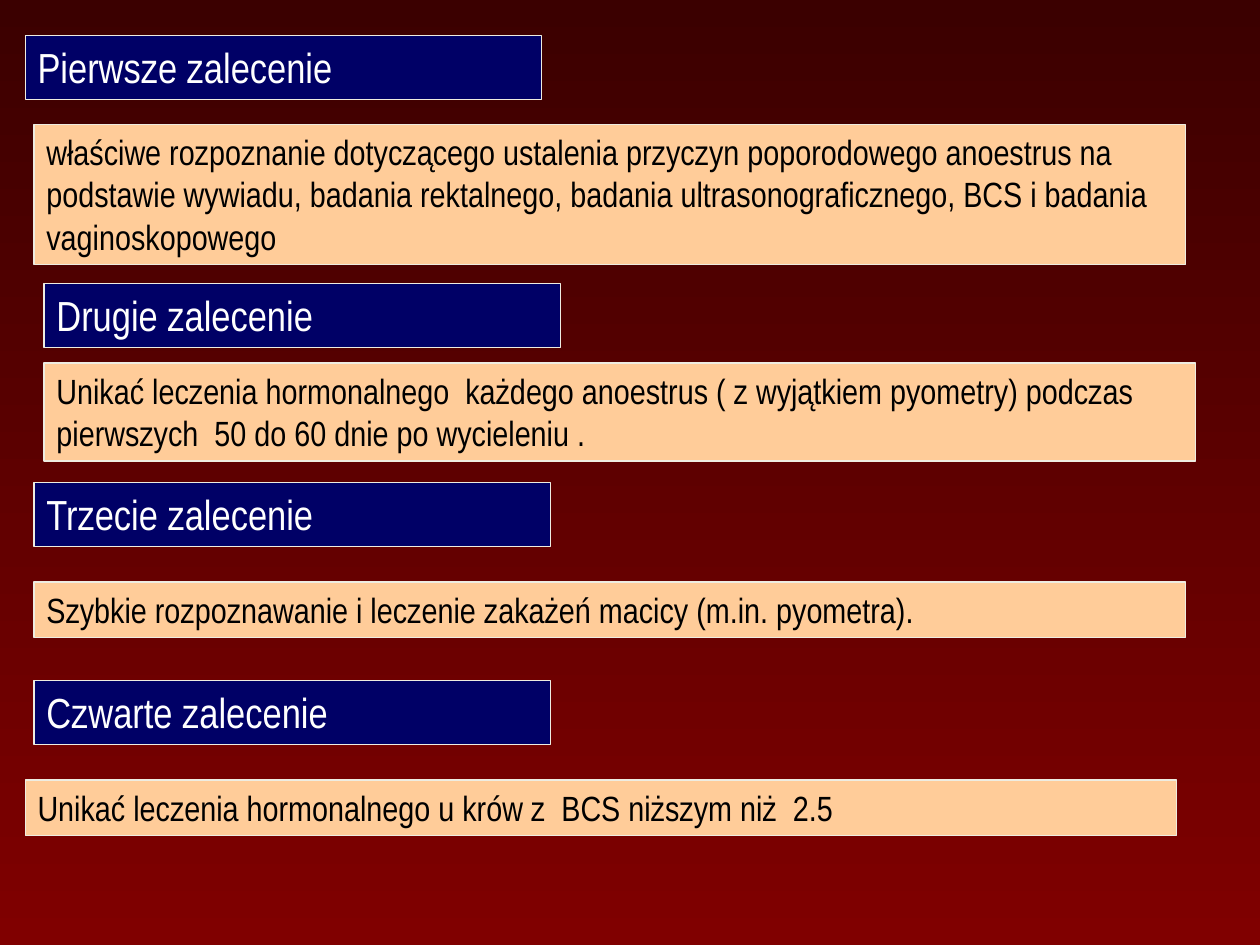
"""Build a slide with four veterinary recommendations, each a heading bar over a text panel."""
from pptx import Presentation
from pptx.dml.color import RGBColor
from pptx.enum.shapes import MSO_SHAPE
from pptx.enum.text import MSO_ANCHOR, MSO_AUTO_SIZE, PP_ALIGN
from pptx.util import Inches, Pt

NAVY = RGBColor(0x00, 0x00, 0x66)
PEACH = RGBColor(0xFF, 0xCC, 0x99)
CREAM = RGBColor(0xEE, 0xEC, 0xE1)
WHITE = RGBColor(0xFF, 0xFF, 0xFF)
BLACK = RGBColor(0x00, 0x00, 0x00)
DARK_RED = RGBColor(0x3B, 0x00, 0x00)
RED = RGBColor(0x80, 0x00, 0x00)

HEADING_WIDTH, HEADING_HEIGHT = 4.1, 0.51
ADVICE_WIDTH = 9.14
ADVICE_HEIGHTS = {1: 0.44, 2: 0.78, 3: 1.11}

RECOMMENDATIONS = [
    ("Pierwsze zalecenie", 0.2, 0.28,
     "właściwe rozpoznanie dotyczącego ustalenia przyczyn poporodowego anoestrus na "
     "podstawie wywiadu, badania rektalnego, badania ultrasonograficznego, BCS i badania "
     "vaginoskopowego", 0.27, 0.99, 3),
    ("Drugie zalecenie", 0.35, 2.25,
     "Unikać leczenia hormonalnego  każdego anoestrus ( z wyjątkiem pyometry) podczas "
     "pierwszych  50 do 60 dnie po wycieleniu .", 0.35, 2.88, 2),
    ("Trzecie zalecenie", 0.27, 3.83,
     "Szybkie rozpoznawanie i leczenie zakażeń macicy (m.in. pyometra).", 0.27, 4.62, 1),
    ("Czwarte zalecenie", 0.27, 5.4,
     "Unikać leczenia hormonalnego u krów z  BCS niższym niż  2.5", 0.2, 6.19, 1),
]


def add_panel(shapes, text, box, fill, color, size):
    panel = shapes.add_shape(MSO_SHAPE.RECTANGLE, *(Inches(length) for length in box))
    panel.shadow.inherit = False
    panel.fill.solid()
    panel.fill.fore_color.rgb = fill
    panel.line.color.rgb = CREAM
    panel.line.width = Pt(0.75)
    frame = panel.text_frame
    frame.text = text
    frame.word_wrap = True
    frame.auto_size = MSO_AUTO_SIZE.SHAPE_TO_FIT_TEXT
    frame.vertical_anchor = MSO_ANCHOR.TOP
    paragraph = frame.paragraphs[0]
    paragraph.alignment = PP_ALIGN.LEFT
    font = paragraph.runs[0].font
    font.name = "Arial Narrow"
    font.size = Pt(size)
    font.color.rgb = color


presentation = Presentation()
presentation.slide_width = Inches(10)
presentation.slide_height = Inches(7.5)
slide = presentation.slides.add_slide(presentation.slide_layouts[6])

backdrop = slide.background.fill
backdrop.gradient()
backdrop.gradient_angle = 270
for stop, position, shade in zip(backdrop.gradient_stops, (0, 1), (DARK_RED, RED)):
    stop.position = position
    stop.color.rgb = shade

for number, (heading, heading_left, heading_top,
             advice, advice_left, advice_top, lines) in enumerate(RECOMMENDATIONS):
    shapes = slide.shapes.add_group_shape().shapes if number else slide.shapes
    add_panel(shapes, heading, (heading_left, heading_top, HEADING_WIDTH, HEADING_HEIGHT),
              NAVY, WHITE, 24)
    add_panel(shapes, advice, (advice_left, advice_top, ADVICE_WIDTH, ADVICE_HEIGHTS[lines]),
              PEACH, BLACK, 20)

presentation.save("out.pptx")
